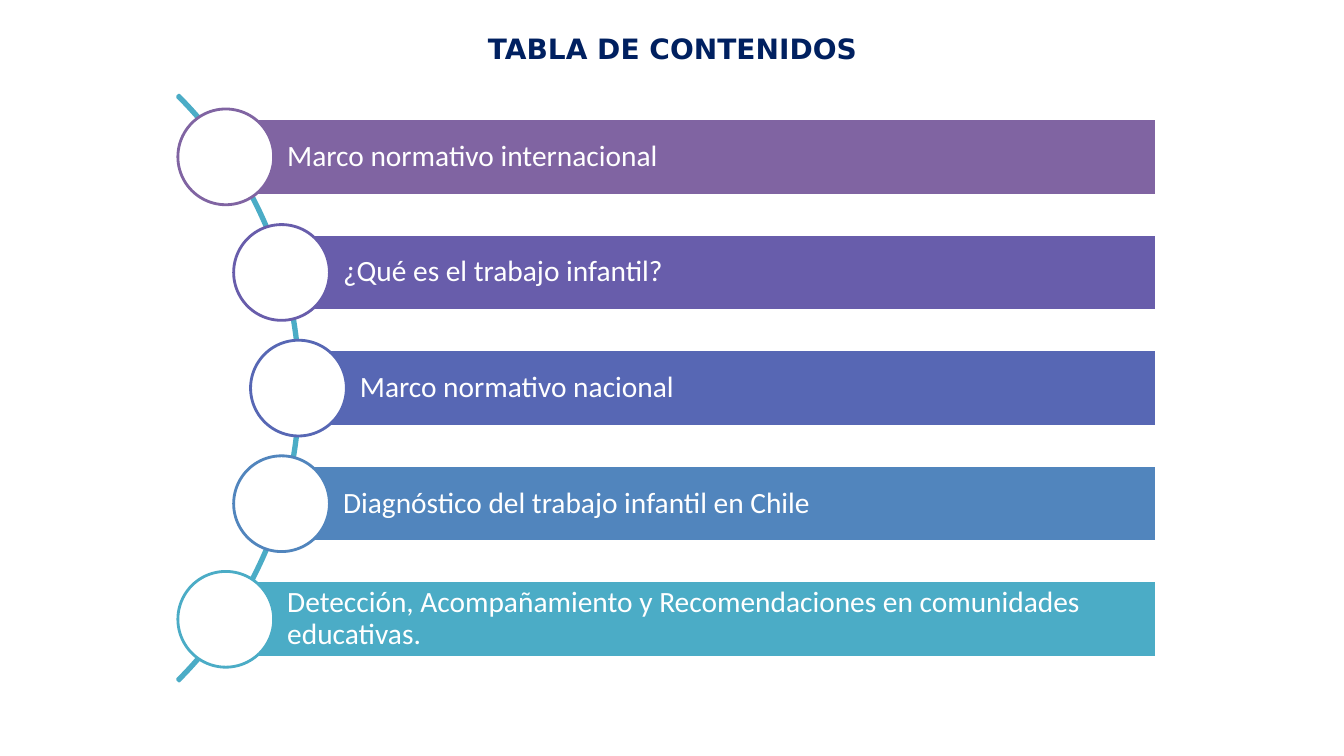
"""Build the table of contents slide: five bars along a curved line."""
from math import sqrt

from pptx import Presentation
from pptx.dml.color import RGBColor
from pptx.enum.shapes import MSO_SHAPE
from pptx.enum.text import MSO_ANCHOR, MSO_AUTO_SIZE, PP_ALIGN
from pptx.util import Inches, Pt

TITLE = "TABLA DE CONTENIDOS"
TOPICS = [
    ("Marco normativo internacional", "8064A2"),
    ("¿Qué es el trabajo infantil?", "685DAB"),
    ("Marco normativo nacional", "5767B4"),
    ("Diagnóstico del trabajo infantil en Chile", "5185BD"),
    ("Detección, Acompañamiento y Recomendaciones en comunidades educativas.", "4BACC6"),
]
WHITE, NAVY, TEAL = "FFFFFF", "002060", "4BACC6"

MIDDLE_Y = 3.85
ROW_STEP = 1.147
BAR_RIGHT, BAR_HEIGHT = 11.47, 0.76
CIRCLE_SIZE = 0.95
CURVE_X, CURVE_RADIUS = -1.05, 4.01
ARC_LEFT, ARC_SIZE = -5.24, 8.22


def color(hex_value):
    return RGBColor.from_string(hex_value)


def add_shape(page, kind, left, top, width, height, fill, line):
    shape = page.shapes.add_shape(
        kind, Inches(left), Inches(top), Inches(width), Inches(height))
    shape.shadow.inherit = False
    if fill:
        shape.fill.solid()
        shape.fill.fore_color.rgb = color(fill)
    else:
        shape.fill.background()
    shape.line.color.rgb = color(line)
    shape.line.width = Pt(2)
    return shape


def style_font(font, name, size, hex_value, bold=False):
    font.name, font.size, font.bold = name, Pt(size), bold
    font.color.rgb = color(hex_value)


def add_title(page):
    title = page.shapes.title
    title.left, title.top = Inches(1.67), Inches(0.26)
    title.width, title.height = Inches(10), Inches(1.08)
    frame = title.text_frame
    frame.text = TITLE
    frame.auto_size = MSO_AUTO_SIZE.NONE
    frame.vertical_anchor = MSO_ANCHOR.TOP
    para = frame.paragraphs[0]
    para.alignment = PP_ALIGN.CENTER
    style_font(para.font, "DejaVu Sans", 20, NAVY, bold=True)


def add_curve(page):
    arc = add_shape(page, MSO_SHAPE.BLOCK_ARC, ARC_LEFT, MIDDLE_Y - ARC_SIZE / 2,
                    ARC_SIZE, ARC_SIZE, None, TEAL)
    for index, value in enumerate((189, 27, 0.003)):
        arc.adjustments[index] = value


def add_topic(page, offset, label, hex_value):
    center_x = CURVE_X + sqrt(CURVE_RADIUS ** 2 - offset ** 2)
    center_y = MIDDLE_Y + offset
    bar = add_shape(page, MSO_SHAPE.RECTANGLE, center_x, center_y - BAR_HEIGHT / 2,
                    BAR_RIGHT - center_x, BAR_HEIGHT, hex_value, WHITE)
    frame = bar.text_frame
    frame.text = label
    frame.word_wrap = True
    frame.vertical_anchor = MSO_ANCHOR.MIDDLE
    frame.margin_left = Inches(0.61)
    frame.margin_top = frame.margin_right = frame.margin_bottom = Inches(0.06)
    para = frame.paragraphs[0]
    para.alignment = PP_ALIGN.LEFT
    para.line_spacing = 0.9
    style_font(para.font, "Calibri", 21, WHITE)
    add_shape(page, MSO_SHAPE.OVAL, center_x - CIRCLE_SIZE / 2, center_y - CIRCLE_SIZE / 2,
              CIRCLE_SIZE, CIRCLE_SIZE, WHITE, hex_value)


def main():
    deck = Presentation()
    deck.slide_width, deck.slide_height = Inches(13.33), Inches(7.5)
    page = deck.slides.add_slide(deck.slide_layouts[5])
    add_title(page)
    add_curve(page)
    for index, (label, hex_value) in enumerate(TOPICS):
        add_topic(page, (index - len(TOPICS) // 2) * ROW_STEP, label, hex_value)
    deck.save("out.pptx")


if __name__ == "__main__":
    main()
